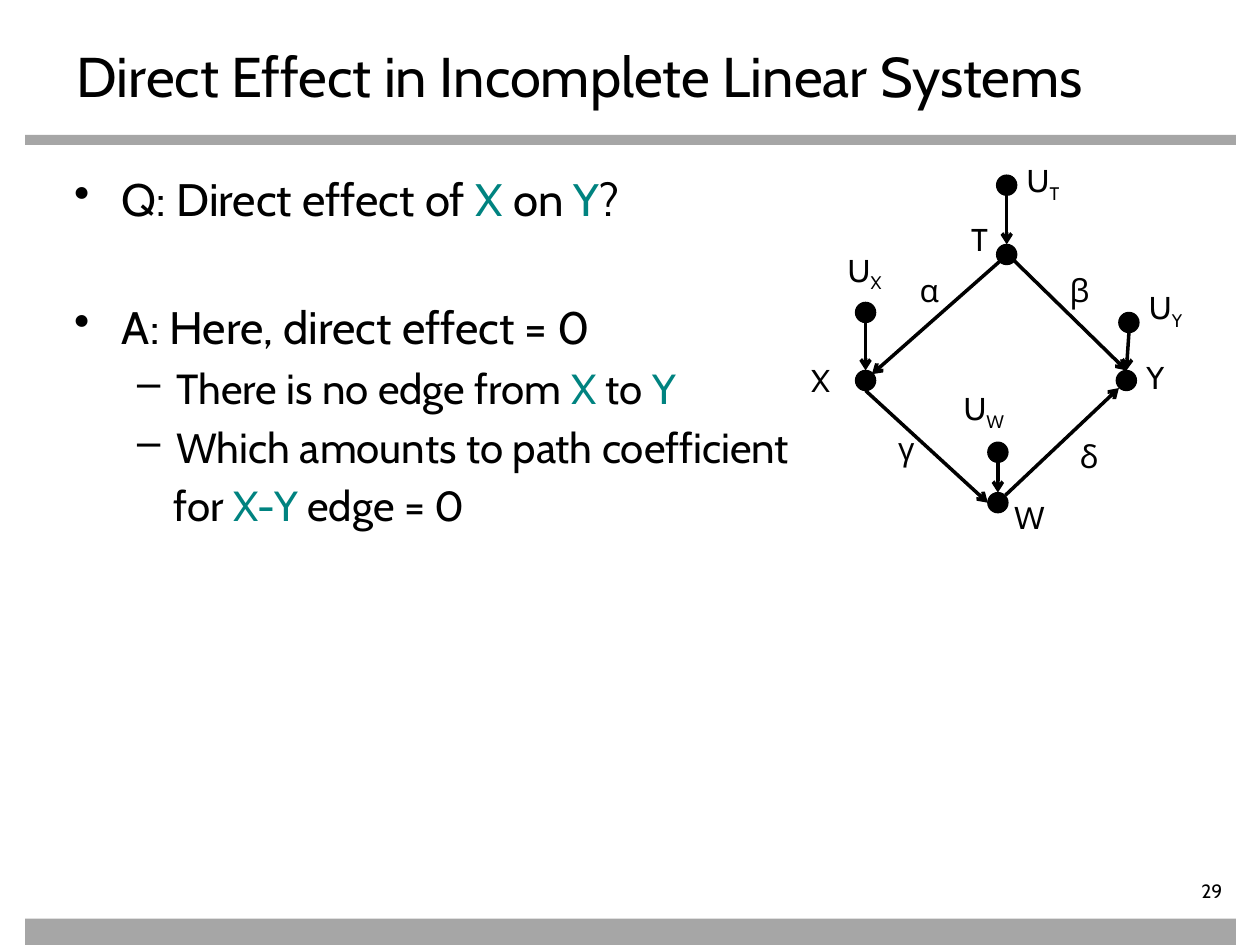
"""Build the slide on direct effects in incomplete linear systems with its path diagram."""
import pptx
import pptx.dml.color
import pptx.enum.shapes
import pptx.enum.text
import pptx.oxml.ns
import pptx.util
from lxml import etree

PX = 9144
BLACK = pptx.dml.color.RGBColor(0x00, 0x00, 0x00)
GREY = pptx.dml.color.RGBColor(0xA6, 0xA6, 0xA6)
TEAL = pptx.dml.color.RGBColor(0x00, 0x83, 0x80)
SHAPE = pptx.enum.shapes.MSO_SHAPE
ALIGN = pptx.enum.text.PP_ALIGN
qn = pptx.oxml.ns.qn

prs = pptx.Presentation()
prs.slide_width, prs.slide_height = 1000 * PX, 750 * PX
s = prs.slides.add_slide(prs.slide_layouts[6])


def add_box(x, y, w, h, **formats):
    sp = s.shapes.add_textbox(x * PX, y * PX, w * PX, h * PX)
    tf = sp.text_frame
    for name, value in ({"word_wrap": True} | formats).items():
        setattr(tf, name, value)
    return tf


def add_run(p, text, size, color=BLACK):
    r = p.add_run()
    r.text = text
    for name, value in {"name": "Cabin", "size": pptx.util.Pt(size)}.items():
        setattr(r.font, name, value)
    r.font.color.rgb = color
    return r


for y, h in ((107, 8), (729, 21)):
    sp = s.shapes.add_shape(SHAPE.RECTANGLE, 20 * PX, y * PX, 961 * PX, h * PX)
    sp.shadow.inherit = False
    sp.fill.solid()
    sp.fill.fore_color.rgb = GREY
    sp.line.fill.background()

tf = add_box(51, 28, 900, 55)
add_run(tf.paragraphs[0], "Direct Effect in Incomplete Linear Systems", 32)

lines = [
    ("•", 38, -38, 0, 26, [("Q: Direct effect of ", BLACK), ("X", TEAL), (" on ", BLACK),
                           ("Y", TEAL), ("?", BLACK)]),
    ("•", 38, -38, 42, 26, [("A: Here, direct effect = 0", BLACK)]),
    ("–", 81, -31, 4.8, 24, [("There is no edge from ", BLACK), ("X", TEAL), (" to ", BLACK),
                             ("Y", TEAL)]),
    ("–", 81, -31, 4.8, 24, [("Which amounts to path coefficient", BLACK)]),
    (None, 79, 0, 4.8, 24, [("for ", BLACK), ("X-Y", TEAL), (" edge = 0", BLACK)]),
]
tf = add_box(49, 131, 664, 307)
for i, (bullet, left, indent, before, size, runs) in enumerate(lines):
    p = tf.add_paragraph() if i else tf.paragraphs[0]
    pPr = p._p.get_or_add_pPr()
    pPr.set("marL", str(left * PX))
    pPr.set("indent", str(indent * PX))
    if bullet:
        etree.SubElement(pPr, qn("a:buChar")).set("char", bullet)
    p.space_before = pptx.util.Pt(before)
    for text, color in runs:
        add_run(p, text, size, color)

tf = add_box(870, 698, 110, 22, margin_left=0, margin_top=0, margin_right=10 * PX, margin_bottom=0)
p = tf.paragraphs[0]
p.alignment = ALIGN.RIGHT
add_run(p, "29", 11)

nodes = [(791, 139), (791, 194), (679, 240), (679, 294), (888, 248), (886, 294),
         (784, 351), (784, 391)]
for x, y in nodes:
    sp = s.shapes.add_shape(SHAPE.OVAL, x * PX, y * PX, 16 * PX, 16 * PX)
    sp.shadow.inherit = False
    sp.fill.solid()
    sp.fill.fore_color.rgb = BLACK
    sp.line.color.rgb = BLACK
    sp.line.width = pptx.util.Pt(0.75)

arrows = [(799, 155, 799, 194), (687, 256, 687, 294), (896, 264, 894, 294), (792, 367, 792, 391),
          (794, 207, 692, 297), (805, 207, 894, 294), (687, 310, 784, 399), (798, 393, 888, 308)]
for arrow in arrows:
    sp = s.shapes.add_connector(pptx.enum.shapes.MSO_CONNECTOR.STRAIGHT, *(v * PX for v in arrow))
    sp.line.color.rgb = BLACK
    sp.line.width = pptx.util.Pt(2)
    etree.SubElement(sp.line._get_or_add_ln(), qn("a:tailEnd")).set("type", "arrow")
    etree.SubElement(sp._element.spPr, qn("a:effectLst"))

labels = [
    ("U", "T", 805, 123, 48), ("U", "X", 663, 194, 50), ("U", "Y", 902, 224, 49),
    ("U", "W", 755, 304, 54), ("T", "", 761, 170, 36), ("X", "", 634, 282, 37),
    ("Y", "", 900, 279, 37), ("W", "", 795, 390, 44), ("α", "", 720, 210, 35),
    ("β", "", 839, 210, 35), ("γ", "", 703, 336, 34), ("δ", "", 847, 342, 34),
]
for text, subscript, x, y, w in labels:
    tf = add_box(x, y, w, 40, word_wrap=False,
                 auto_size=pptx.enum.text.MSO_AUTO_SIZE.SHAPE_TO_FIT_TEXT)
    p = tf.paragraphs[0]
    add_run(p, text, 18)
    if subscript:
        r = add_run(p, subscript, 18)
        r._r.get_or_add_rPr().set("baseline", "-25000")

prs.save("out.pptx")
